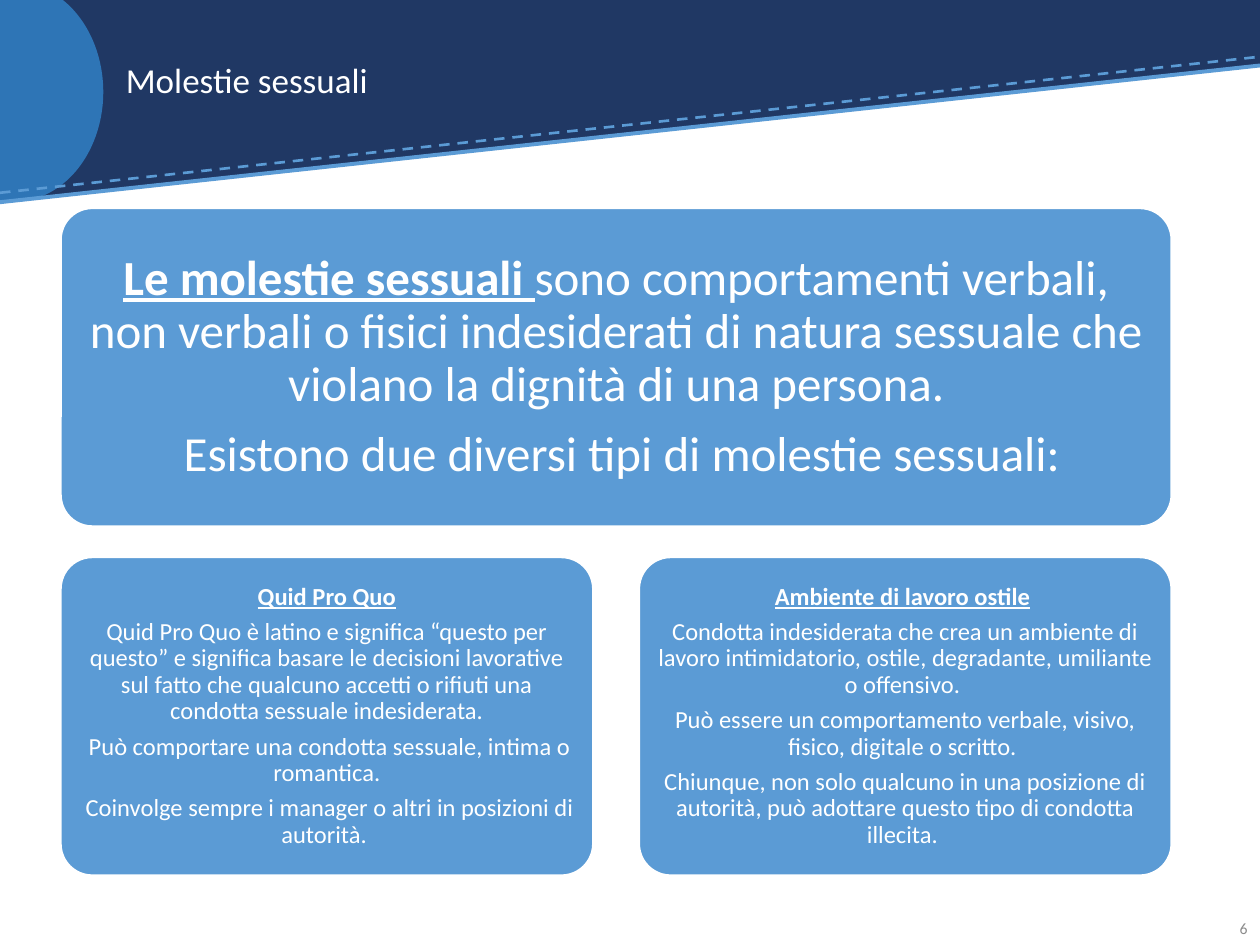
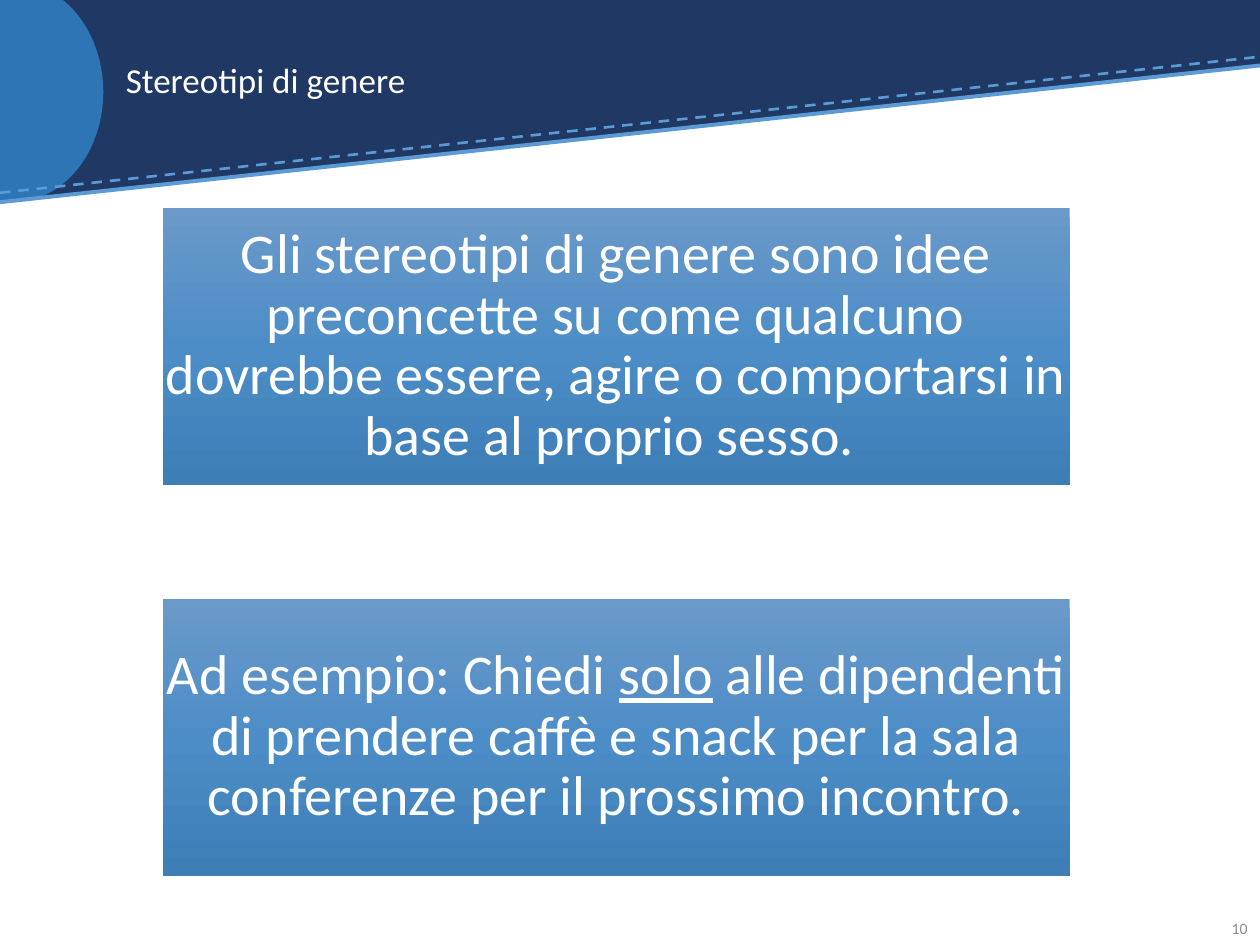
from copy import deepcopy
from typing import NamedTuple

from pptx import Presentation
from pptx.dml.color import RGBColor
from pptx.enum.dml import MSO_LINE
from pptx.enum.shapes import MSO_CONNECTOR, MSO_SHAPE
from pptx.enum.text import MSO_ANCHOR, PP_ALIGN
from pptx.oxml.ns import qn
from pptx.oxml.xmlchemy import OxmlElement
from pptx.shapes.autoshape import Shape
from pptx.slide import Slide
from pptx.util import Inches, Pt

WIDE, HIGH = Inches(10), Inches(7.5)
COL, ROW = WIDE / 100, HIGH / 100  # a grid of 100 columns by 100 rows

NAVY = RGBColor(0x20, 0x38, 0x64)
BLUE = RGBColor(0x2E, 0x75, 0xB6)
SKY = RGBColor(0x5B, 0x9B, 0xD5)
GREY = RGBColor(0x8C, 0x8C, 0x8C)
WHITE = RGBColor(0xFF, 0xFF, 0xFF)
FADE = [(0, RGBColor(0x6B, 0x99, 0xC9)),
        (0.5, RGBColor(0x4D, 0x8D, 0xC7)),
        (1, RGBColor(0x3E, 0x7E, 0xB7))]
FONT = "Calibri"

TOP, END = 22, 92.67  # rows where the body starts and ends


class Box(NamedTuple):
    """Left and width in columns, top and height in rows."""
    left: float
    top: float
    width: float
    height: float

    def emu(self) -> tuple[int, int, int, int]:
        return (round(self.left * COL), round(self.top * ROW),
                round(self.width * COL), round(self.height * ROW))


class Span(NamedTuple):
    text: str
    bold: bool = False
    under: bool = False


class Card(NamedTuple):
    box: Box
    size: int
    inset: float
    paras: list[list[Span]]


class Rule(NamedTuple):
    start: float
    stop: float
    width: float
    dash: bool


RULES = [Rule(20.4, 6, 1.5, True), Rule(21.4, 6.93, 2.25, False)]


def add_form(slide: Slide, kind: MSO_SHAPE, box: Box, fill: RGBColor) -> Shape:
    form = slide.shapes.add_shape(kind, *box.emu())
    form.shadow.inherit = False
    form.fill.solid()
    form.fill.fore_color.rgb = fill
    form.line.fill.background()
    return form


def add_rule(slide: Slide, rule: Rule) -> None:
    line = slide.shapes.add_connector(
        MSO_CONNECTOR.STRAIGHT, 0, round(rule.start * ROW),
        WIDE, round(rule.stop * ROW))
    line.line.color.rgb = SKY
    line.line.width = Pt(rule.width)
    if rule.dash:
        line.line.dash_style = MSO_LINE.DASH
    line._element.spPr.append(OxmlElement("a:effectLst"))


def add_label(slide: Slide, box: Box, text: str, size: int,
              color: RGBColor, align: PP_ALIGN) -> None:
    frame = slide.shapes.add_textbox(*box.emu()).text_frame
    frame.word_wrap = True
    frame.vertical_anchor = MSO_ANCHOR.MIDDLE
    frame.text = text
    para = frame.paragraphs[0]
    para.alignment = align
    font = para.runs[0].font
    font.name, font.size, font.color.rgb = FONT, Pt(size), color


def add_base(deck: Presentation, title: str, page: int) -> Slide:
    """Add a slide with the slanted band, its title and page number."""
    slide = deck.slides.add_slide(deck.slide_layouts[6])
    add_form(slide, MSO_SHAPE.RECTANGLE, Box(0, 0, 100, 6.93), NAVY)
    slant = add_form(slide, MSO_SHAPE.RIGHT_TRIANGLE,
                     Box(0, 6.8, 100, 14.53), NAVY)
    slant._element.spPr.find(qn("a:xfrm")).set("flipV", "1")
    add_form(slide, MSO_SHAPE.OVAL, Box(-5.9, -1.87, 14.1, 23.2), BLUE)
    for rule in RULES:
        add_rule(slide, rule)
    add_label(slide, Box(9, 2.67, 80.5, 11.47), title, 20, WHITE, PP_ALIGN.LEFT)
    add_label(slide, Box(94.7, 95.6, 5.3, 5.33), str(page), 9, GREY,
              PP_ALIGN.RIGHT)
    return slide


def fill_text(form: Shape, card: Card) -> None:
    frame = form.text_frame
    frame.word_wrap = True
    frame.vertical_anchor = MSO_ANCHOR.MIDDLE
    frame.margin_left = frame.margin_right = Inches(card.inset)
    frame.margin_top = frame.margin_bottom = Inches(card.inset)
    for num, spans in enumerate(card.paras):
        para = frame.add_paragraph() if num else frame.paragraphs[0]
        para.alignment = PP_ALIGN.CENTER
        para.line_spacing = 0.9
        para.space_after = Pt(card.size * 0.35)
        for span in spans:
            run = para.add_run()
            run.text = span.text
            font = run.font
            font.name, font.size, font.color.rgb = FONT, Pt(card.size), WHITE
            font.bold, font.underline = span.bold, span.under


def add_round(slide: Slide, card: Card) -> None:
    form = add_form(slide, MSO_SHAPE.ROUNDED_RECTANGLE, card.box, SKY)
    form.adjustments[0] = 0.1
    form.line.color.rgb = WHITE
    form.line.width = Pt(1.5)
    fill_text(form, card)


def add_fade(slide: Slide, card: Card) -> None:
    form = add_form(slide, MSO_SHAPE.RECTANGLE, card.box, SKY)
    form.fill.gradient()
    form.fill.gradient_angle = 270
    stops = form._element.spPr.find(".//" + qn("a:gsLst"))
    stops.append(deepcopy(stops[0]))
    for stop, (place, color) in zip(form.fill.gradient_stops, FADE):
        stop.position = place
        stop.color.rgb = color
    fill_text(form, card)


def add_abuse(deck: Presentation) -> None:
    slide = add_base(deck, "Molestie sessuali", 6)
    left, wide, half, high = 4.8, 88.2, 42.3, 33.73
    low = END - high
    cards = [
        Card(Box(left, TOP, wide, high), 28, 0.12, [
            [Span("Le molestie sessuali ", True, True),
             Span("sono comportamenti verbali, non verbali o fisici "
                  "indesiderati di natura sessuale che violano la dignità "
                  "di una persona.")],
            [Span(" Esistono due diversi tipi di molestie sessuali:")]]),
        Card(Box(left, low, half, high), 14, 0.06, [
            [Span("Quid Pro Quo", True, True)],
            [Span("Quid Pro Quo è latino e significa “questo per questo” e "
                  "significa basare le decisioni lavorative sul fatto che "
                  "qualcuno accetti o rifiuti una condotta sessuale "
                  "indesiderata.")],
            [Span(" Può comportare una condotta sessuale, intima o "
                  "romantica.")],
            [Span(" Coinvolge sempre i manager o altri in posizioni di "
                  "autorità. ")]]),
        Card(Box(left + wide - half, low, half, high), 14, 0.06, [
            [Span("Ambiente di lavoro ostile", True, True), Span(" ")],
            [Span("Condotta indesiderata che crea un ambiente di lavoro "
                  "intimidatorio, ostile, degradante, umiliante o "
                  "offensivo. ")],
            [Span("Può essere un comportamento verbale, visivo, fisico, "
                  "digitale o scritto. ")],
            [Span("Chiunque, non solo qualcuno in una posizione di autorità, "
                  "può adottare questo tipo di condotta illecita. ")]]),
    ]
    for card in cards:
        add_round(slide, card)


def add_bias(deck: Presentation) -> None:
    slide = add_base(deck, "Stereotipi di genere", 10)
    left, wide, high = 12.9, 72, 29.33
    cards = [
        Card(Box(left, TOP, wide, high), 32, 0.02, [
            [Span("Gli stereotipi di genere sono idee preconcette su come "
                  "qualcuno dovrebbe essere, agire o comportarsi in base al "
                  "proprio sesso. ")]]),
        Card(Box(left, END - high, wide, high), 32, 0.02, [
            [Span("Ad esempio: Chiedi "), Span("solo", under=True),
             Span(" alle dipendenti di prendere caffè e snack per la sala "
                  "conferenze per il prossimo incontro.")]]),
    ]
    for card in cards:
        add_fade(slide, card)


def main() -> None:
    deck = Presentation()
    deck.slide_width, deck.slide_height = WIDE, HIGH
    add_abuse(deck)
    add_bias(deck)
    deck.save("out.pptx")


if __name__ == "__main__":
    main()
